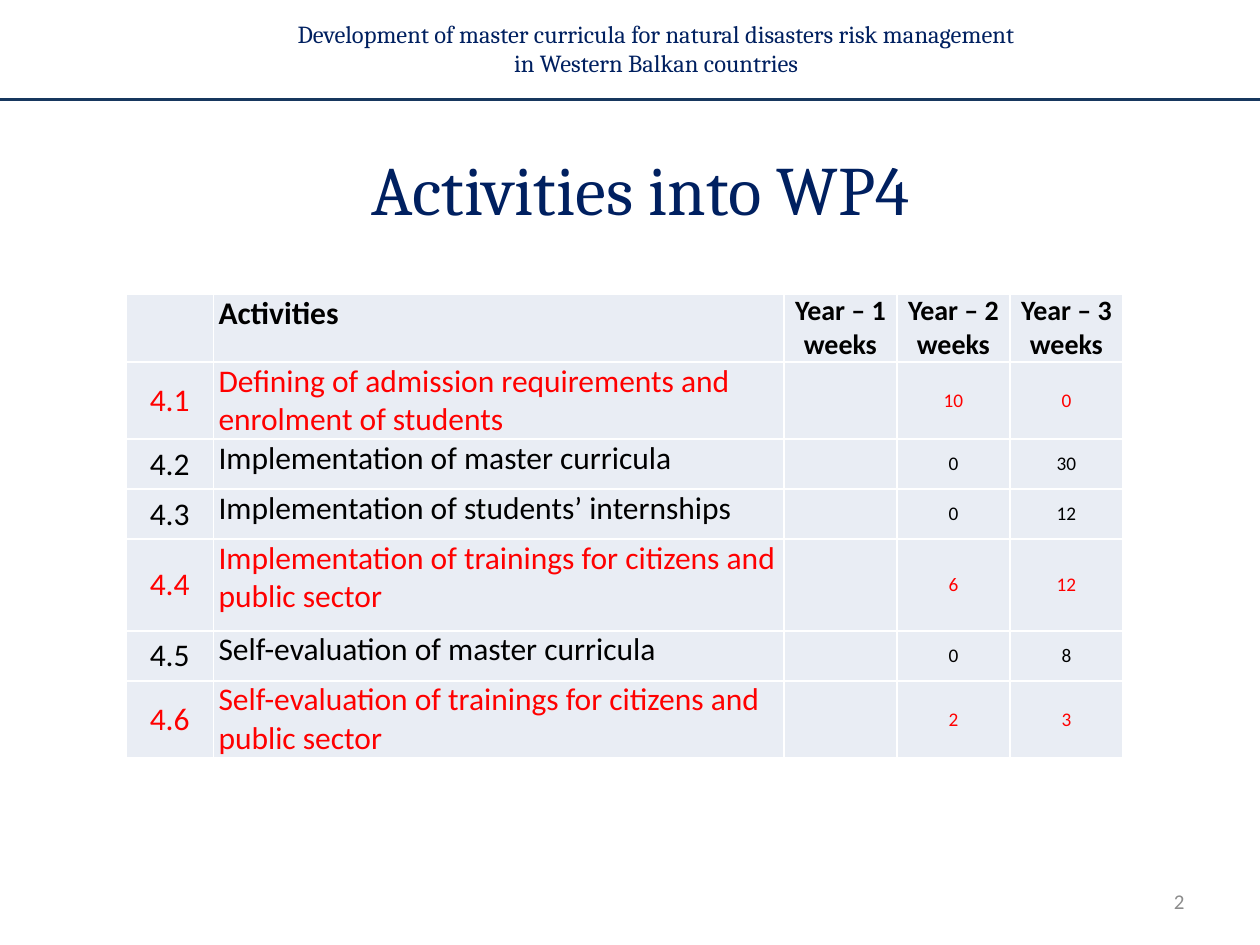
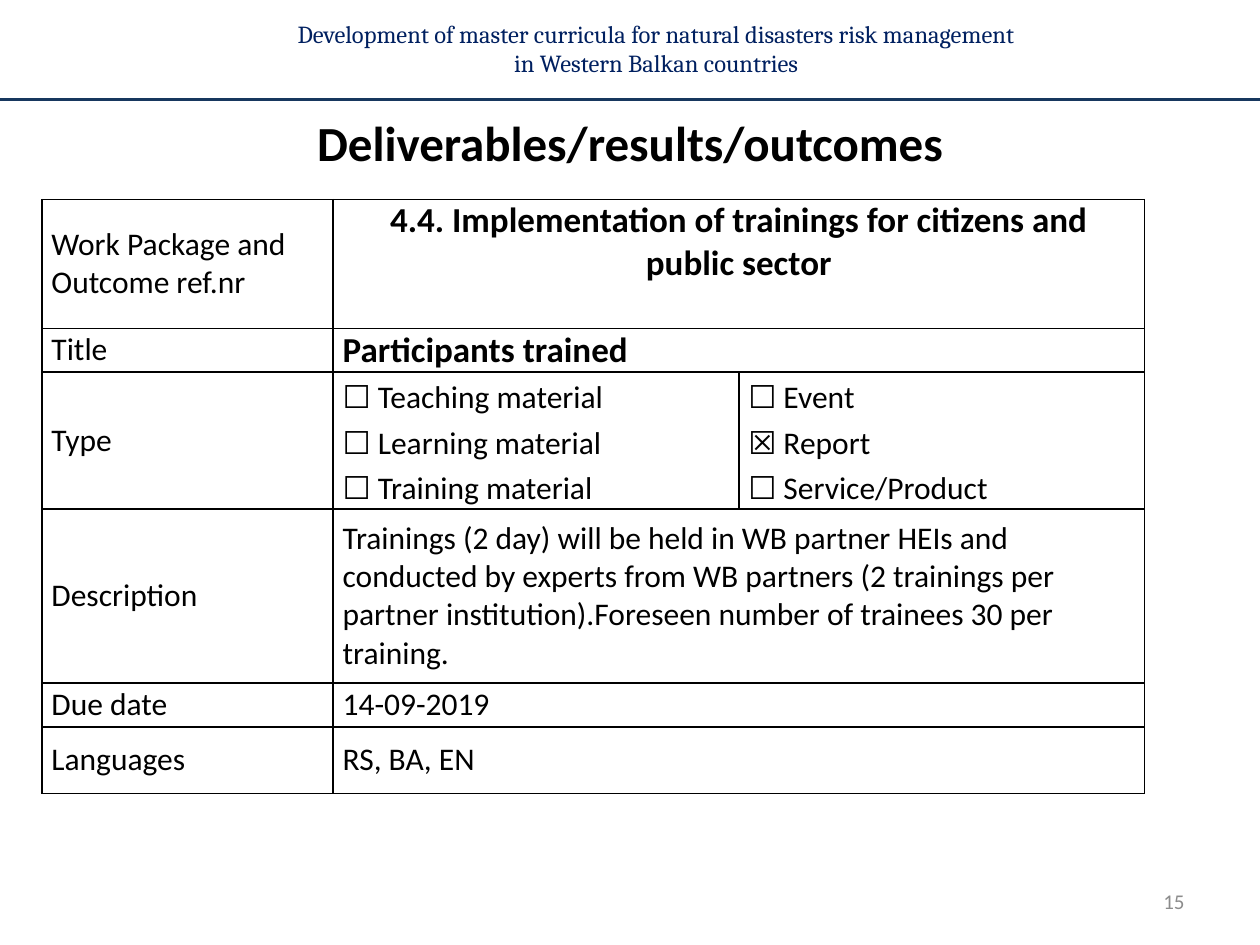
from lxml.etree import SubElement
from pptx import Presentation
from pptx.dml.color import RGBColor
from pptx.enum.shapes import MSO_CONNECTOR
from pptx.enum.text import MSO_ANCHOR, PP_ALIGN
from pptx.oxml.ns import qn
from pptx.util import Pt

NAVY, RULE, GREY = "002060", "17375E", "8C8C8C"
BLACK, RED, WHITE, PALE = "000000", "FF0000", "FFFFFF", "E9EDF4"
BODY, SERIF, SYMBOL = "Calibri", "Cambria", "Noto Sans CJK JP"
LEFT, CENTER, RIGHT = PP_ALIGN.LEFT, PP_ALIGN.CENTER, PP_ALIGN.RIGHT
TOP, MIDDLE = MSO_ANCHOR.TOP, MSO_ANCHOR.MIDDLE
PROJECT = ("Development of master curricula for natural disasters "
           "risk management in Western Balkan countries")

ACTIVITIES = [
    ("4.1", "Defining of admission requirements and enrolment of students", "10", "0", RED),
    ("4.2", "Implementation of master curricula", "0", "30", BLACK),
    ("4.3", "Implementation of students’ internships", "0", "12", BLACK),
    ("4.4", "Implementation of trainings for citizens and public sector", "6", "12", RED),
    ("4.5", "Self-evaluation of master curricula", "0", "8", BLACK),
    ("4.6", "Self-evaluation of trainings for citizens and public sector", "2", "3", RED),
]
DESCRIPTION = ("Trainings (2 day) will be held in WB partner HEIs and conducted by experts "
               "from WB partners (2 trainings per partner institution).Foreseen number of "
               "trainees 30 per training.")


def color(hex_code):
    return RGBColor.from_string(hex_code)


def style(paragraph, size, ink=BLACK, face=BODY, bold=False, align=LEFT):
    paragraph.alignment = align
    font = paragraph.font
    font.size, font.name, font.bold = Pt(size), face, bold
    font.color.rgb = color(ink)


def add_text(slide, text, left, top, width, height, size, anchor=MIDDLE, **look):
    frame = slide.shapes.add_textbox(Pt(left), Pt(top), Pt(width), Pt(height)).text_frame
    frame.word_wrap = True
    frame.vertical_anchor = anchor
    frame.paragraphs[0].text = text
    style(frame.paragraphs[0], size, **look)
    return frame


def add_page(deck, number):
    """Add a blank slide with the project header, the rule and the page number."""
    slide = deck.slides.add_slide(deck.slide_layouts[6])
    add_text(slide, PROJECT, 157, 12, 436, 31, 14, ink=NAVY, face=SERIF, align=CENTER)
    rule = slide.shapes.add_connector(MSO_CONNECTOR.STRAIGHT, 0, Pt(57), Pt(720), Pt(57))
    rule.line.color.rgb = color(RULE)
    rule.line.width = Pt(2)
    SubElement(rule.element.spPr, qn("a:effectLst"))
    add_text(slide, number, 516, 500.5, 168, 29, 12, ink=GREY, align=RIGHT)
    return slide


def frame_cell(cell, border, fill, inset):
    """Give a cell its four borders, its fill and its side margins."""
    properties = cell._tc.get_or_add_tcPr()
    for side in ("a:lnL", "a:lnR", "a:lnT", "a:lnB"):
        line = SubElement(properties, qn(side), w=str(Pt(1)))
        SubElement(SubElement(line, qn("a:solidFill")), qn("a:srgbClr"), val=border)
    if fill:
        cell.fill.solid()
        cell.fill.fore_color.rgb = color(fill)
    else:
        cell.fill.background()
    cell.margin_left = cell.margin_right = Pt(inset)
    cell.margin_top = cell.margin_bottom = 0


def add_grid(slide, left, top, widths, heights, border, fill, inset):
    table = slide.shapes.add_table(len(heights), len(widths), Pt(left), Pt(top),
                                   Pt(sum(widths)), Pt(sum(heights))).table
    table.first_row = table.horz_banding = False
    for column, width in zip(table.columns, widths):
        column.width = Pt(width)
    for row, height in zip(table.rows, heights):
        row.height = Pt(height)
    for cell in table.iter_cells():
        frame_cell(cell, border, fill, inset)
    return table


def write(cell, text, size, anchor=MIDDLE, **look):
    cell.text = text
    cell.vertical_anchor = anchor
    for paragraph in cell.text_frame.paragraphs:
        style(paragraph, size, **look)


def write_choices(cell, choices, chosen=None):
    """List choices in a cell, each after its check box."""
    write(cell, "\n" * (len(choices) - 1), 18)
    for paragraph, choice in zip(cell.text_frame.paragraphs, choices):
        box = paragraph.add_run()
        box.text = "☒" if choice == chosen else "☐"
        box.font.name = SYMBOL
        paragraph.add_run().text = f" {choice}"


def add_activities(deck):
    slide = add_page(deck, "2")
    add_text(slide, "Activities into WP4", 42, 78, 648, 59, 39.6,
             ink=NAVY, face=SERIF, align=CENTER)
    plan = add_grid(slide, 72, 168, [50, 326] + [64.6] * 3,
                    [39, 44, 28.6, 28.6, 52.4, 28.6, 44], WHITE, PALE, 2.9)
    write(plan.cell(0, 1), "Activities", 18, TOP, bold=True)
    for year in (1, 2, 3):
        write(plan.cell(0, year + 1), f"Year – {year}\nweeks", 16, bold=True, align=CENTER)
    for row, (number, activity, second, third, ink) in enumerate(ACTIVITIES, 1):
        write(plan.cell(row, 0), number, 18, ink=ink, align=CENTER)
        write(plan.cell(row, 1), activity, 18, TOP, ink=ink)
        write(plan.cell(row, 3), second, 11, ink=ink, align=CENTER)
        write(plan.cell(row, 4), third, 11, ink=ink, align=CENTER)


def add_deliverables(deck):
    slide = add_page(deck, "15")
    title = add_text(slide, "Deliverables/results/outcomes", 36, 64, 648, 60, 28, TOP,
                     bold=True, align=CENTER)
    title.margin_top = 0
    sheet = add_grid(slide, 24, 114, [166.4, 231.8, 231.8],
                     [73.6, 25, 78.2, 99.6, 25, 38], BLACK, None, 5.4)
    labels = ("Work Package and Outcome ref.nr", "Title", "Type",
              "Description", "Due date", "Languages")
    for row, label in enumerate(labels):
        write(sheet.cell(row, 0), label, 18)
        if label != "Type":
            sheet.cell(row, 1).merge(sheet.cell(row, 2))
    write(sheet.cell(0, 1), "4.4. Implementation of trainings for citizens and public sector",
          20, TOP, bold=True, align=CENTER)
    write(sheet.cell(1, 1), "Participants trained", 20, bold=True)
    write_choices(sheet.cell(2, 1), [f"{use} material" for use in
                                     ("Teaching", "Learning", "Training")])
    write_choices(sheet.cell(2, 2), ["Event", "Report", "Service/Product"], "Report")
    for row, value in enumerate((DESCRIPTION, "14-09-2019", "RS, BA, EN"), 3):
        write(sheet.cell(row, 1), value, 18)


def main():
    deck = Presentation()
    deck.slide_width, deck.slide_height = Pt(720), Pt(540)
    add_activities(deck)
    add_deliverables(deck)
    deck.save("out.pptx")


if __name__ == "__main__":
    main()
